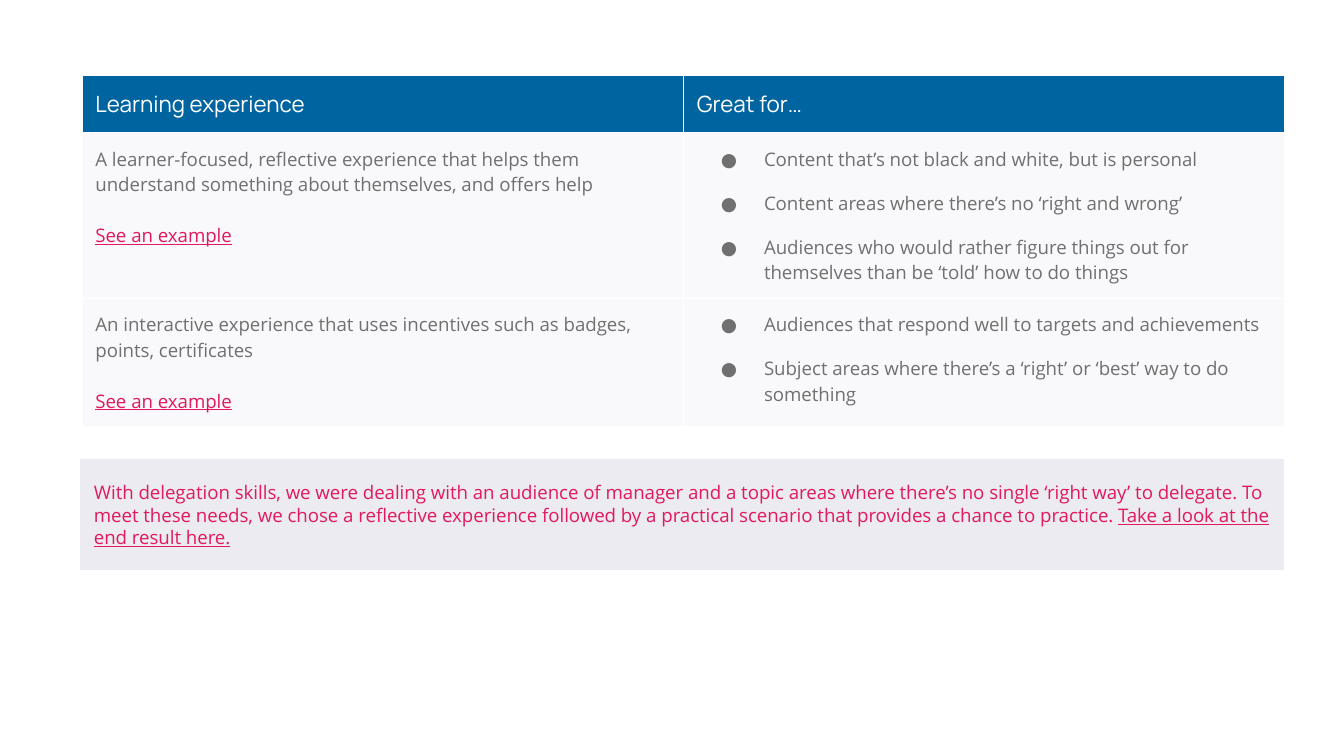
from lxml import etree
from pptx import Presentation
from pptx.dml.color import RGBColor
from pptx.enum.shapes import MSO_SHAPE
from pptx.enum.text import MSO_ANCHOR, PP_ALIGN
from pptx.oxml.ns import qn
from pptx.util import Emu, Inches, Pt

RECT = MSO_SHAPE.RECTANGLE
MIDDLE, LEFT = MSO_ANCHOR.MIDDLE, PP_ALIGN.LEFT
WIDE = Inches(10)
HIGH = Emu(WIDE * 9 // 16)
WHITE, BLUE, PALE = "FFFFFF", "0064A1", "F9F9FB"
GREY, PINK, MIST = "707070", "E1195F", "EBEBF1"
HEAD, BODY = "Manrope", "Open Sans"
PAD = Inches(0.1)
ROWS = (0.42, 1.23, 0.95)  # heights in inches

TITLES = ("Learning experience", "Great for…")
LINK = "See an example"
ITEMS = [
    ("A learner-focused, reflective experience that helps them understand "
     "something about themselves, and offers help",
     ["Content that’s not black and white, but is personal",
      "Content areas where there’s no ‘right and wrong’",
      "Audiences who would rather figure things out for themselves than be "
      "‘told’ how to do things"]),
    ("An interactive experience that uses incentives such as badges, points, "
     "certificates",
     ["Audiences that respond well to targets and achievements",
      "Subject areas where there’s a ‘right’ or ‘best’ way to do something"]),
]
NOTE = ("With delegation skills, we were dealing with an audience of manager "
        "and a topic areas where there’s no single ‘right way’ to delegate. To "
        "meet these needs, we chose a reflective experience followed by a "
        "practical scenario that provides a chance to practice. ")
NOTE_LINK = "Take a look at the end result here."


def color(code):
    return RGBColor.from_string(code)


def style(font, size, face, code, under=None):
    font.size, font.name, font.underline = Pt(size), face, under
    font.color.rgb = color(code)


def pad(part):
    part.margin_left = part.margin_right = PAD
    part.margin_top = part.margin_bottom = PAD


def add_line(frame, text, first, gap=0):
    para = frame.paragraphs[0] if first else frame.add_paragraph()
    para.text = text
    if not first:
        para.space_before = Pt(gap)
    return para


def add_bullet(para):
    props = para._p.get_or_add_pPr()
    props.set("marL", str(Inches(0.5)))
    props.set("indent", str(Inches(-0.32)))
    tint = etree.SubElement(props, qn("a:buClr"))
    etree.SubElement(tint, qn("a:srgbClr"), val=GREY)
    etree.SubElement(props, qn("a:buSzPts"), val="1000")
    etree.SubElement(props, qn("a:buFont"), typeface=BODY)
    etree.SubElement(props, qn("a:buChar"), char="●")


def dress(cell, fill):
    """Set the padding, white borders and fill of a cell."""
    pad(cell)
    props = cell._tc.get_or_add_tcPr()
    for side in ("lnL", "lnR", "lnT", "lnB"):
        edge = etree.SubElement(props, qn("a:" + side), w=str(Pt(0.75)))
        paint = etree.SubElement(edge, qn("a:solidFill"))
        etree.SubElement(paint, qn("a:srgbClr"), val=WHITE)
    cell.fill.solid()
    cell.fill.fore_color.rgb = color(fill)


def add_grid(slide, left, top, width, height):
    table = slide.shapes.add_table(
        len(ROWS), len(TITLES), left, top, width, height).table
    for col in table.columns:
        col.width = Emu(width // len(TITLES))
    for row, share in zip(table.rows, ROWS):
        row.height = Emu(int(height * share / sum(ROWS)))

    # Header row
    for cell, title in zip(table.rows[0].cells, TITLES):
        dress(cell, BLUE)
        para = add_line(cell.text_frame, title, True)
        style(para.font, 12, HEAD, WHITE)

    # Experience on the left, its uses on the right
    for num, (text, uses) in enumerate(ITEMS, 1):
        about, fit = table.cell(num, 0), table.cell(num, 1)
        dress(about, PALE)
        dress(fit, PALE)
        para = add_line(about.text_frame, text, True)
        style(para.font, 10, BODY, GREY)
        para = add_line(about.text_frame, LINK, False, 13.6)
        style(para.font, 10, BODY, PINK, True)
        for pos, use in enumerate(uses):
            para = add_line(fit.text_frame, use, pos == 0, 10)
            add_bullet(para)
            style(para.font, 10, BODY, GREY)


def add_note(slide, left, top, width, height):
    box = slide.shapes.add_shape(RECT, left, top, width, height)
    box.shadow.inherit = False
    box.fill.solid()
    box.fill.fore_color.rgb = box.line.color.rgb = color(MIST)
    box.line.width = Pt(0.75)
    frame = box.text_frame
    frame.word_wrap, frame.vertical_anchor = True, MIDDLE
    pad(frame)
    para = add_line(frame, NOTE, True)
    para.alignment = LEFT
    style(para.font, 10, BODY, PINK)
    link = para.add_run()
    link.text = NOTE_LINK
    link.font.underline = True


def main():
    deck = Presentation()
    deck.slide_width, deck.slide_height = WIDE, HIGH
    slide = deck.slides.add_slide(deck.slide_layouts[6])
    add_grid(slide, Inches(0.61), Inches(0.56), Inches(8.95),
             Inches(sum(ROWS)))
    add_note(slide, Inches(0.6), Inches(3.42), Inches(8.95), Inches(0.82))
    deck.save("out.pptx")


if __name__ == "__main__":
    main()
